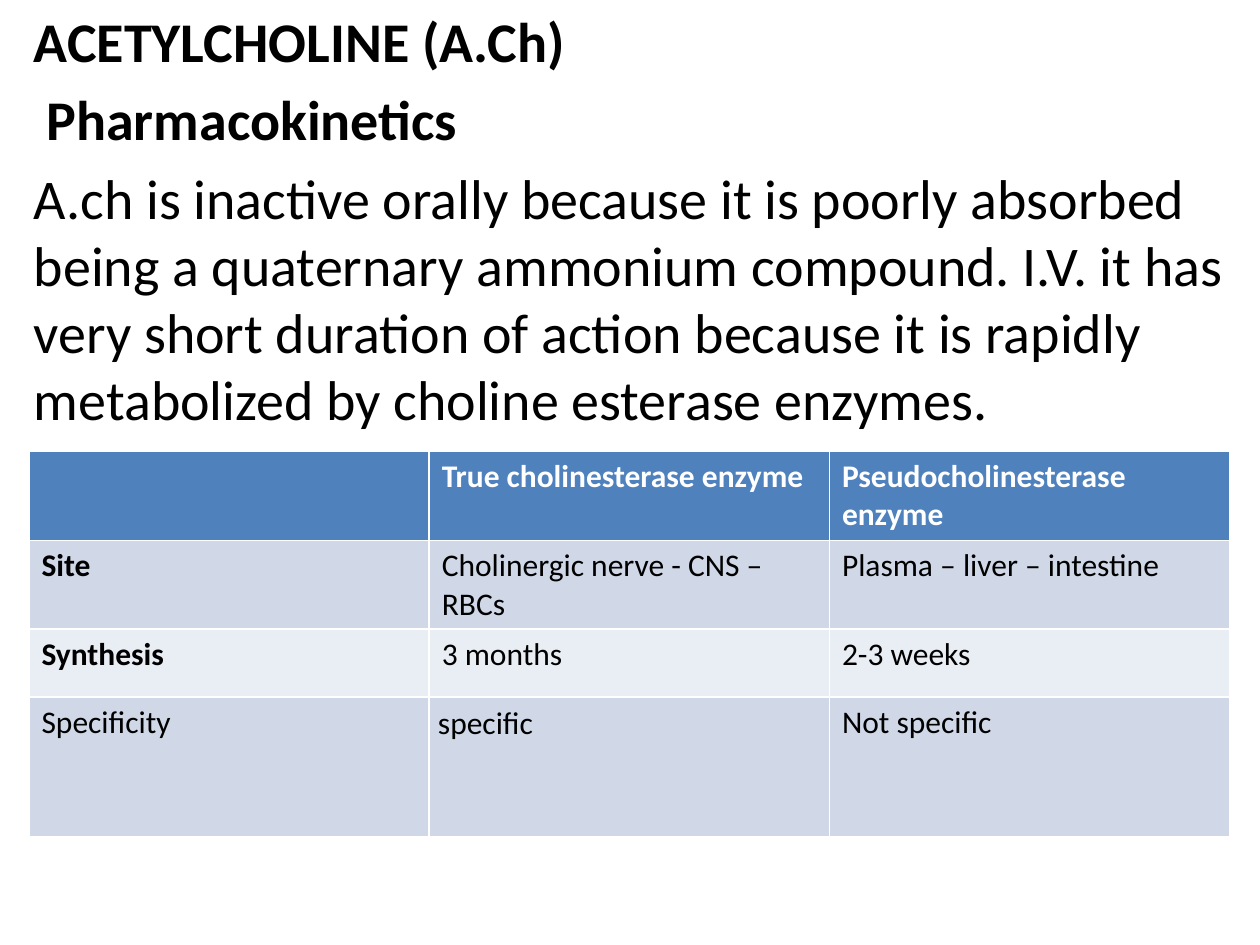
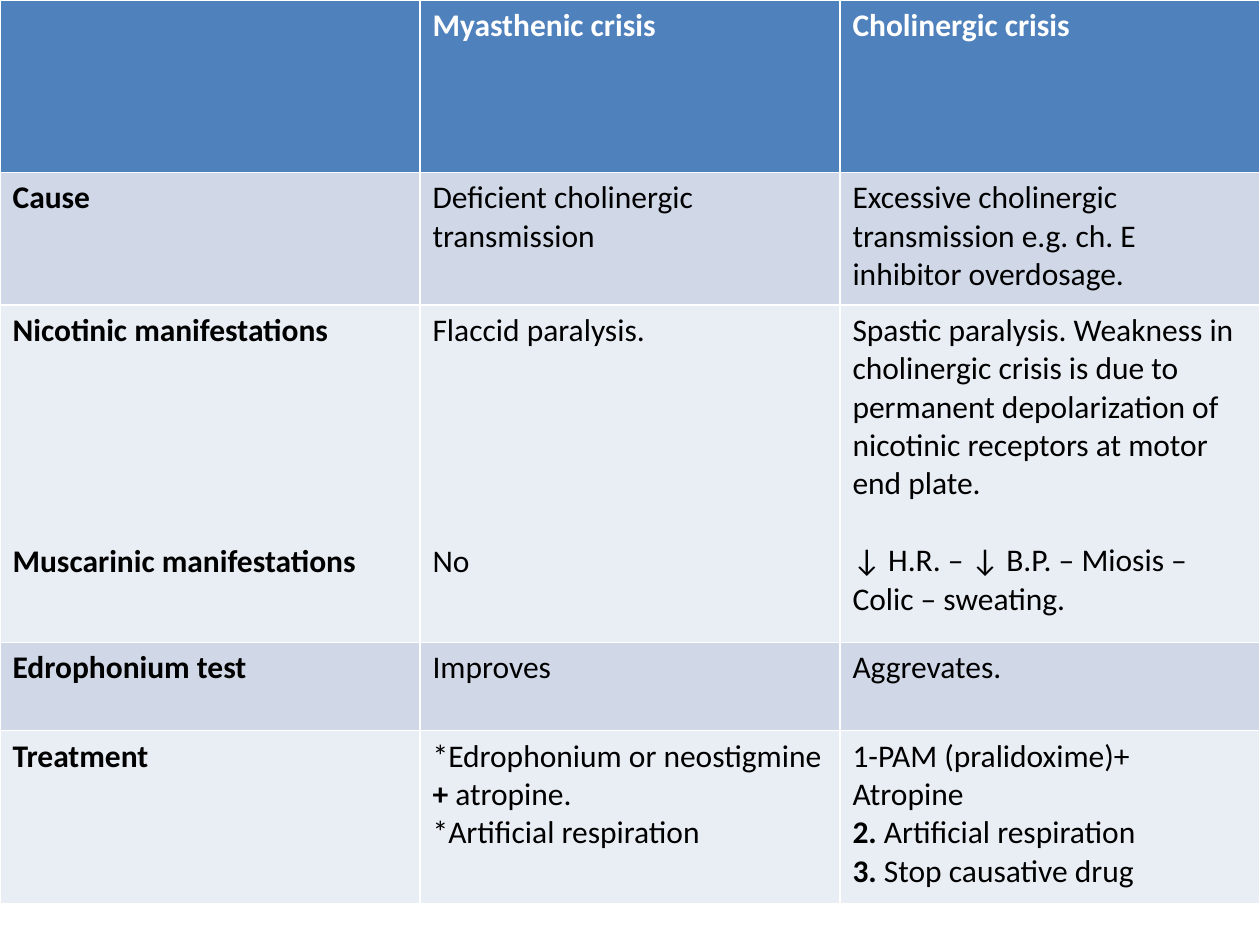
from pptx import Presentation
from pptx.dml.color import RGBColor
from pptx.enum.text import PP_ALIGN as Align
from pptx.util import Inches, Pt

SLIDE_WIDTH, SLIDE_HEIGHT = 10, 7.5
FONT = "Calibri"
BLACK, WHITE = "000000", "FFFFFF"
HEADER_FILL = "4F81BD"
BAND_FILLS = ["D0D8E8", "E9EDF4"]
BODY_SIZE, TABLE_SIZE = 32, 18
LINE_HEIGHT = 22

# "|" switches bold on and off inside a paragraph.
INTRODUCTION = [
    "|ACETYLCHOLINE (A.Ch)|",
    " |Pharmacokinetics|",
    "A.ch is inactive orally because it is poorly absorbed being a quaternary "
    "ammonium compound. I.V. it has very short duration of action because it is "
    "rapidly metabolized by choline esterase enzymes.",
]

ENZYMES = [
    ["", "|True cholinesterase enzyme|", "|Pseudocholinesterase enzyme|"],
    ["|Site|", "Cholinergic nerve - CNS – RBCs", "Plasma – liver – intestine"],
    ["|Synthesis|", "3 months", "2-3 weeks"],
    ["Specificity", "specific", "Not specific"],
]
ENZYME_HEIGHTS = [0.71, 0.7, 0.54, 1.11]

CRISES = [
    ["", "|Myasthenic crisis|", "|Cholinergic crisis|"],
    ["|Cause|", "Deficient cholinergic transmission",
     "Excessive cholinergic transmission e.g. ch. E inhibitor overdosage."],
    [["|Nicotinic manifestations|", "|Muscarinic manifestations|"],
     ["Flaccid paralysis.", "No"],
     ["Spastic paralysis. Weakness in cholinergic crisis is due to permanent "
      "depolarization of nicotinic receptors at motor end plate.",
      "↓ H.R. – ↓ B.P. – Miosis – Colic – sweating."]],
    ["|Edrophonium test|", "Improves", "Aggrevates."],
    ["|Treatment|",
     ["*Edrophonium or neostigmine| +| atropine.", "*Artificial respiration"],
     ["1-PAM (pralidoxime)+ Atropine", "|2.| Artificial respiration",
      "|3.| Stop causative drug"]],
]
CRISIS_HEIGHTS = [1.37, 1.05, 2.68, 0.7, 1.37]
MANIFESTATIONS_ROW = 2
GAP_LINES = [5, 5, 1]


def color(value):
    return RGBColor.from_string(value)


def write(frame, text, size=TABLE_SIZE, fill=BLACK, space_before=0):
    frame.word_wrap = True
    lines = [text] if isinstance(text, str) else text
    for index, line in enumerate(lines):
        paragraph = frame.paragraphs[0] if index == 0 else frame.add_paragraph()
        paragraph.space_before = Pt(space_before)
        paragraph.font.size = Pt(size)
        for part, words in enumerate(line.split("|")):
            if words:
                run = paragraph.add_run()
                run.text = words
                run.font.name = FONT
                run.font.size = Pt(size)
                run.font.bold = part % 2 == 1
                run.font.color.rgb = color(fill)


def add_table(slide, rows, heights, left, top, width):
    columns = len(rows[0])
    table = slide.shapes.add_table(
        len(rows), columns, Inches(left), Inches(top),
        Inches(width), Inches(sum(heights))).table
    for column in table.columns:
        column.width = Inches(width / columns)
    for row_index, (row, height) in enumerate(zip(rows, heights)):
        table.rows[row_index].height = Inches(height)
        header = row_index == 0
        fill = HEADER_FILL if header else BAND_FILLS[(row_index - 1) % 2]
        for column_index, text in enumerate(row):
            cell = table.cell(row_index, column_index)
            cell.fill.solid()
            cell.fill.fore_color.rgb = color(fill)
            write(cell.text_frame, text, fill=WHITE if header else BLACK)
    return table


def build_enzyme_slide(slide):
    left = 0.17
    box = slide.shapes.add_textbox(
        Inches(left), 0, Inches(SLIDE_WIDTH - left), Inches(6.7))
    write(box.text_frame, INTRODUCTION, size=BODY_SIZE, space_before=BODY_SIZE * 0.2)
    table = add_table(slide, ENZYMES, ENZYME_HEIGHTS, 0.23, 3.58, 9.53)
    specific = table.cell(3, 1)
    specific.margin_left = specific.margin_right = Inches(0.07)
    specific.margin_top = specific.margin_bottom = 0
    paragraph = specific.text_frame.paragraphs[0]
    paragraph.alignment = Align.JUSTIFY
    paragraph.line_spacing = 1.2


def build_crisis_slide(slide):
    table = add_table(slide, CRISES, CRISIS_HEIGHTS, 0, 0, SLIDE_WIDTH)
    for column_index, lines in enumerate(GAP_LINES):
        cell = table.cell(MANIFESTATIONS_ROW, column_index)
        cell.text_frame.paragraphs[1].space_before = Pt(lines * LINE_HEIGHT)


def main():
    presentation = Presentation()
    presentation.slide_width = Inches(SLIDE_WIDTH)
    presentation.slide_height = Inches(SLIDE_HEIGHT)
    blank = presentation.slide_layouts[6]
    for build in (build_enzyme_slide, build_crisis_slide):
        build(presentation.slides.add_slide(blank))
    presentation.save("out.pptx")


if __name__ == "__main__":
    main()
